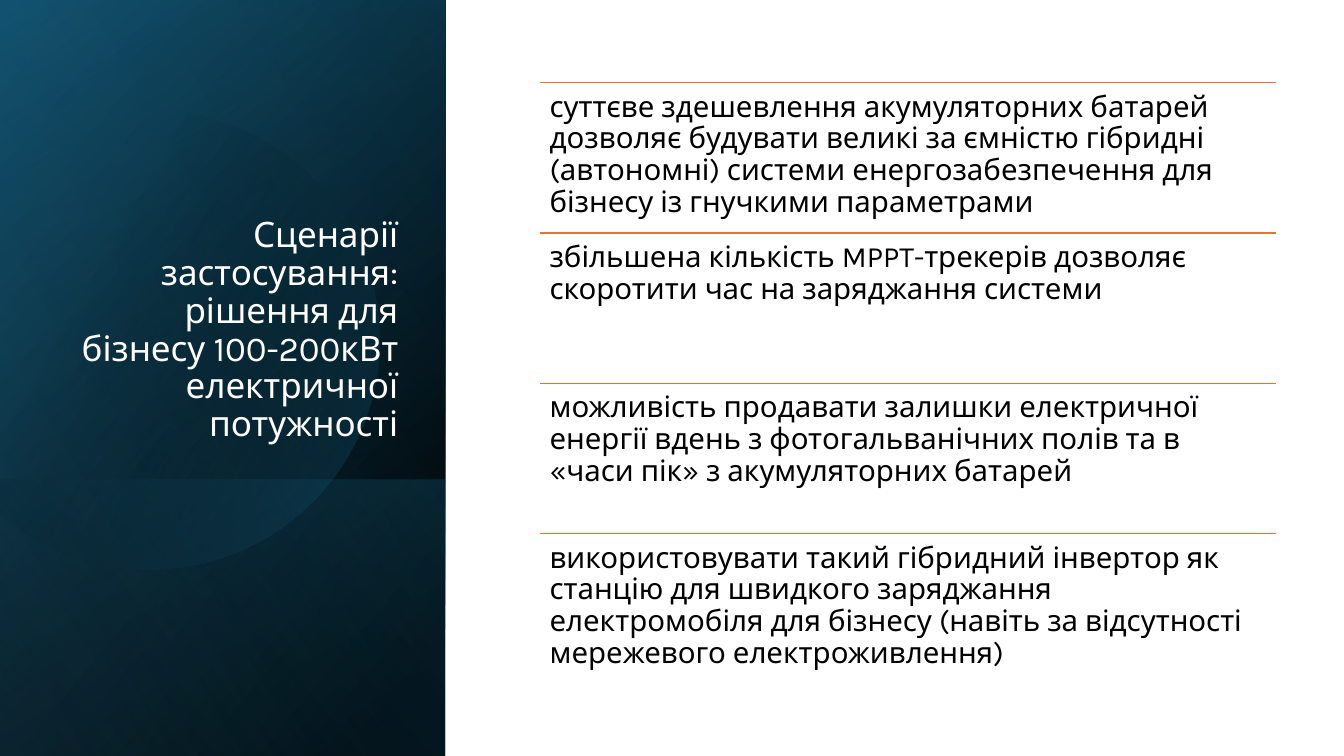
"""Build a slide with a shaded title panel and four ruled points."""
from math import acos, cos, sin

from pptx import Presentation
from pptx.dml.color import RGBColor
from pptx.enum.shapes import MSO_CONNECTOR, MSO_SHAPE
from pptx.enum.text import MSO_ANCHOR, MSO_AUTO_SIZE, PP_ALIGN
from pptx.oxml import parse_xml
from pptx.oxml.ns import nsdecls, qn
from pptx.util import Cm, Pt

RECT = MSO_SHAPE.RECTANGLE
LINE = MSO_CONNECTOR.STRAIGHT
RIGHT, LEFT = PP_ALIGN.RIGHT, PP_ALIGN.LEFT
TOP, BOTTOM = MSO_ANCHOR.TOP, MSO_ANCHOR.BOTTOM
FIXED = MSO_AUTO_SIZE.NONE

FONT = "Karla"
WIDE, HIGH = 33.87, 19.05
TITLE = ("Сценарії застосування: рішення для бізнесу 100-200кВт "
         "електричної потужності")
POINTS = (
    "суттєве здешевлення акумуляторних батарей дозволяє будувати великі за "
    "ємністю гібридні (автономні) системи енергозабезпечення для бізнесу "
    "із гнучкими параметрами",
    "збільшена кількість MPPT-трекерів дозволяє скоротити час на "
    "заряджання системи",
    "можливість продавати залишки електричної енергії вдень з "
    "фотогальванічних полів та в «часи пік» з акумуляторних батарей",
    "використовувати такий гібридний інвертор як станцію для швидкого "
    "заряджання електромобіля для бізнесу (навіть за відсутності "
    "мережевого електроживлення)",
)


def paint(color, code):
    """Set a colour format from a hex string."""
    color.rgb = RGBColor.from_string(code)


def shade(shape, angle, *stops):
    """Fill a shape with a gradient of (place, colour, opacity) stops."""
    marks = "".join(
        f'<a:gs pos="{place * 1000}"><a:srgbClr val="{code}">'
        f'<a:alpha val="{solid * 1000}"/></a:srgbClr></a:gs>'
        for place, code, solid in stops)
    shape.shadow.inherit = False
    shape.line.fill.background()
    shape.fill.background()
    props = shape._element.spPr
    props.replace(props.find(qn("a:noFill")), parse_xml(
        f'<a:gradFill {nsdecls("a")} rotWithShape="1"><a:gsLst>{marks}'
        f'</a:gsLst><a:lin ang="{angle * 60000}" scaled="0"/></a:gradFill>'))


def write(frame, text, size, code, align, anchor):
    """Write one paragraph into a text frame."""
    frame.word_wrap = True
    frame.auto_size = FIXED
    frame.vertical_anchor = anchor
    para = frame.paragraphs[0]
    para.alignment = align
    para.line_spacing = 0.9
    run = para.add_run()
    run.text = text
    run.font.name = FONT
    run.font.size = Pt(size)
    paint(run.font.color, code)


def add_disc(slide, left, mid, radius):
    """Draw a disc centred right of the slide edge and cut off by it."""
    limit = acos(-left / radius)
    turns = [limit * step / 60 for step in range(-60, 61)]
    spots = [(Cm(left + radius * cos(turn)), Cm(mid + radius * sin(turn)))
             for turn in turns]
    pen = slide.shapes.build_freeform(*spots[0])
    pen.add_line_segments(spots[1:], close=True)
    shade(pen.convert_to_shape(), 30, (29, "000000", 0), (100, "156082", 43))


def add_panel(slide, left, top, width, height):
    """Draw the layered dark panel and place the title on it."""
    def layer(drop, angle, *stops):
        """Add a full-width layer that starts some way down."""
        band = slide.shapes.add_shape(RECT, Cm(left), Cm(top + drop),
                                      Cm(width), Cm(height - drop))
        shade(band, angle, *stops)

    layer(0, 220, (8, "000000", 100), (100, "104862", 100))
    layer(0, 240, (0, "000000", 0), (99, "156082", 46))
    layer(12.09, 140, (2, "156082", 29), (100, "000000", 30))
    add_disc(slide, left + 3.78, top + 8.57, 5.79)
    layer(0, 150, (0, "000000", 0), (99, "46B1E1", 11))

    title = slide.shapes.title
    title.left, title.top = Cm(left + 1.63), Cm(top + 4.67)
    title.width, title.height = Cm(8.66), Cm(6.65)
    write(title.text_frame, TITLE, 25, "FFFFFF", RIGHT, BOTTOM)
    title._element.getparent().append(title._element)


def add_points(slide, left, top, width, height):
    """Stack the points in equal rows, each under a thin rule."""
    row = height / len(POINTS)
    for index, text in enumerate(POINTS):
        y = top + index * row
        rule = slide.shapes.add_connector(LINE, Cm(left), Cm(y),
                                          Cm(left + width), Cm(y))
        rule.line.width = Pt(1)
        paint(rule.line.color, "E97132")
        rule._element.spPr.append(
            parse_xml(f'<a:effectLst {nsdecls("a")}/>'))
        box = slide.shapes.add_textbox(Cm(left), Cm(y), Cm(width), Cm(row))
        frame = box.text_frame
        frame.margin_left = frame.margin_right = Cm(0.23)
        frame.margin_top = frame.margin_bottom = Cm(0.23)
        write(frame, text, 21, "000000", LEFT, TOP)


def main():
    """Build and save the slide."""
    deck = Presentation()
    deck.slide_width, deck.slide_height = Cm(WIDE), Cm(HIGH)
    slide = deck.slides.add_slide(deck.slide_layouts[5])
    add_panel(slide, 0, 0, 11.22, HIGH)
    add_points(slide, 13.62, 2.08, 18.53, 15.16)
    deck.save("out.pptx")


if __name__ == "__main__":
    main()
